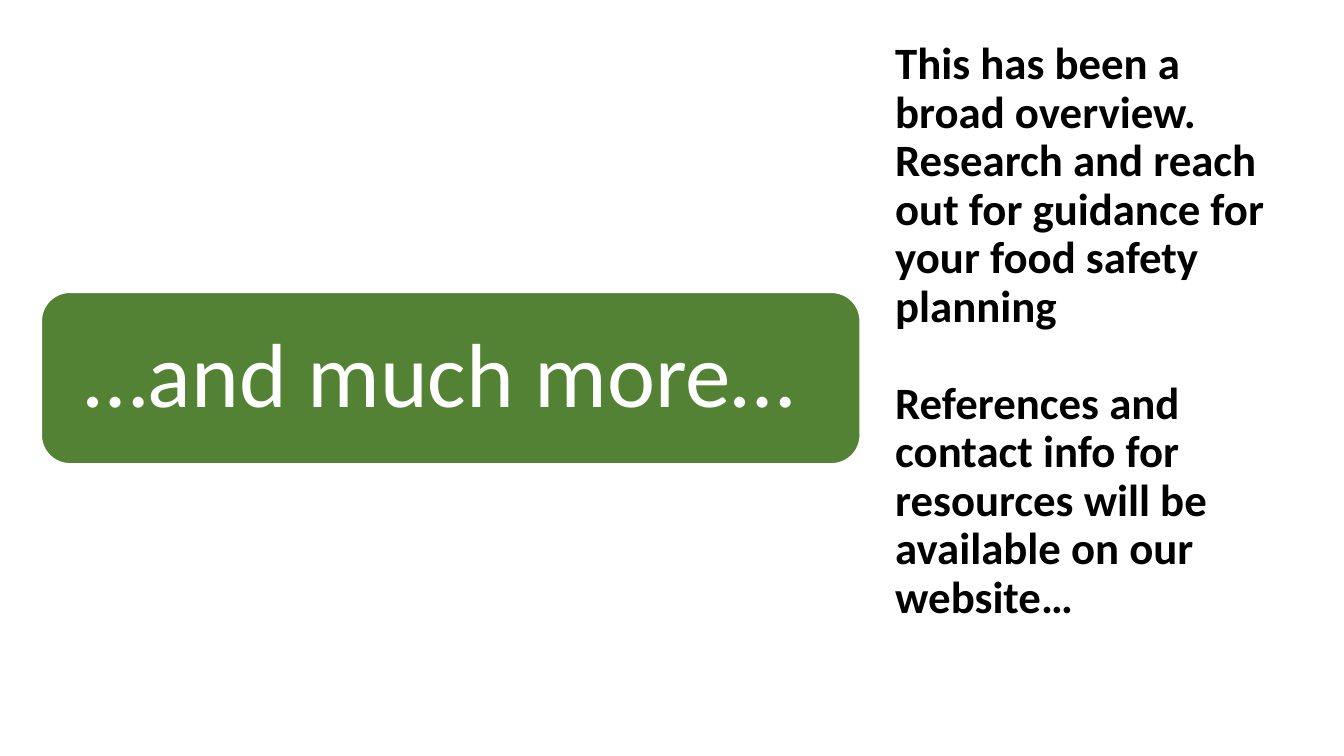
"""Build the closing slide: a green banner beside a bold summary."""
from dataclasses import dataclass

from pptx import Presentation
from pptx.dml.color import RGBColor
from pptx.enum.shapes import MSO_SHAPE
from pptx.enum.text import MSO_ANCHOR, PP_ALIGN
from pptx.shapes.autoshape import Shape
from pptx.util import Inches, Pt

GREEN = RGBColor(0x54, 0x82, 0x35)
WHITE = RGBColor(0xFF, 0xFF, 0xFF)
BLACK = RGBColor(0x00, 0x00, 0x00)
PAGE_WIDTH, PAGE_HEIGHT = Inches(13.33), Inches(7.5)


@dataclass(frozen=True)
class Area:
    """A rectangle given in percent of the page."""
    left: float
    top: float
    width: float
    height: float

    def lengths(self) -> tuple[int, int, int, int]:
        return (int(PAGE_WIDTH * self.left / 100), int(PAGE_HEIGHT * self.top / 100),
                int(PAGE_WIDTH * self.width / 100), int(PAGE_HEIGHT * self.height / 100))


@dataclass(frozen=True)
class TextStyle:
    size: float
    color: RGBColor
    bold: bool
    anchor: MSO_ANCHOR
    side_inset: float
    gap: float = 0


BANNER_AREA = Area(3.08, 38.67, 60.92, 22.67)
SUMMARY_AREA = Area(65.87, 4.8, 31.13, 86.93)
BANNER_STYLE = TextStyle(65, WHITE, False, MSO_ANCHOR.MIDDLE, 0.35)
SUMMARY_STYLE = TextStyle(32, BLACK, True, MSO_ANCHOR.TOP, 0.1, gap=35)
BANNER_TEXT = ["…and much more…"]
SUMMARY_TEXT = [
    "This has been a broad overview. Research and reach out for guidance "
    "for your food safety planning",
    "References and contact info for resources will be available on our website…",
]


def write(box: Shape, texts: list[str], style: TextStyle) -> None:
    frame = box.text_frame
    frame.word_wrap = True
    frame.vertical_anchor = style.anchor
    frame.margin_left = frame.margin_right = Inches(style.side_inset)
    frame.text = "\n".join(texts)
    for index, para in enumerate(frame.paragraphs):
        para.alignment = PP_ALIGN.LEFT
        para.line_spacing = 0.9
        para.space_before = Pt(style.gap if index else 0)
        para.font.name = "Calibri"
        para.font.size = Pt(style.size)
        para.font.bold = style.bold
        para.font.color.rgb = style.color


def main() -> None:
    deck = Presentation()
    deck.slide_width, deck.slide_height = PAGE_WIDTH, PAGE_HEIGHT
    page = deck.slides.add_slide(deck.slide_layouts[6])

    summary = page.shapes.add_textbox(*SUMMARY_AREA.lengths())
    write(summary, SUMMARY_TEXT, SUMMARY_STYLE)

    banner = page.shapes.add_shape(MSO_SHAPE.ROUNDED_RECTANGLE, *BANNER_AREA.lengths())
    banner.shadow.inherit = False
    banner.fill.solid()
    banner.fill.fore_color.rgb = GREEN
    banner.line.color.rgb = WHITE
    banner.line.width = Pt(1)
    write(banner, BANNER_TEXT, BANNER_STYLE)

    deck.save("out.pptx")


if __name__ == "__main__":
    main()
